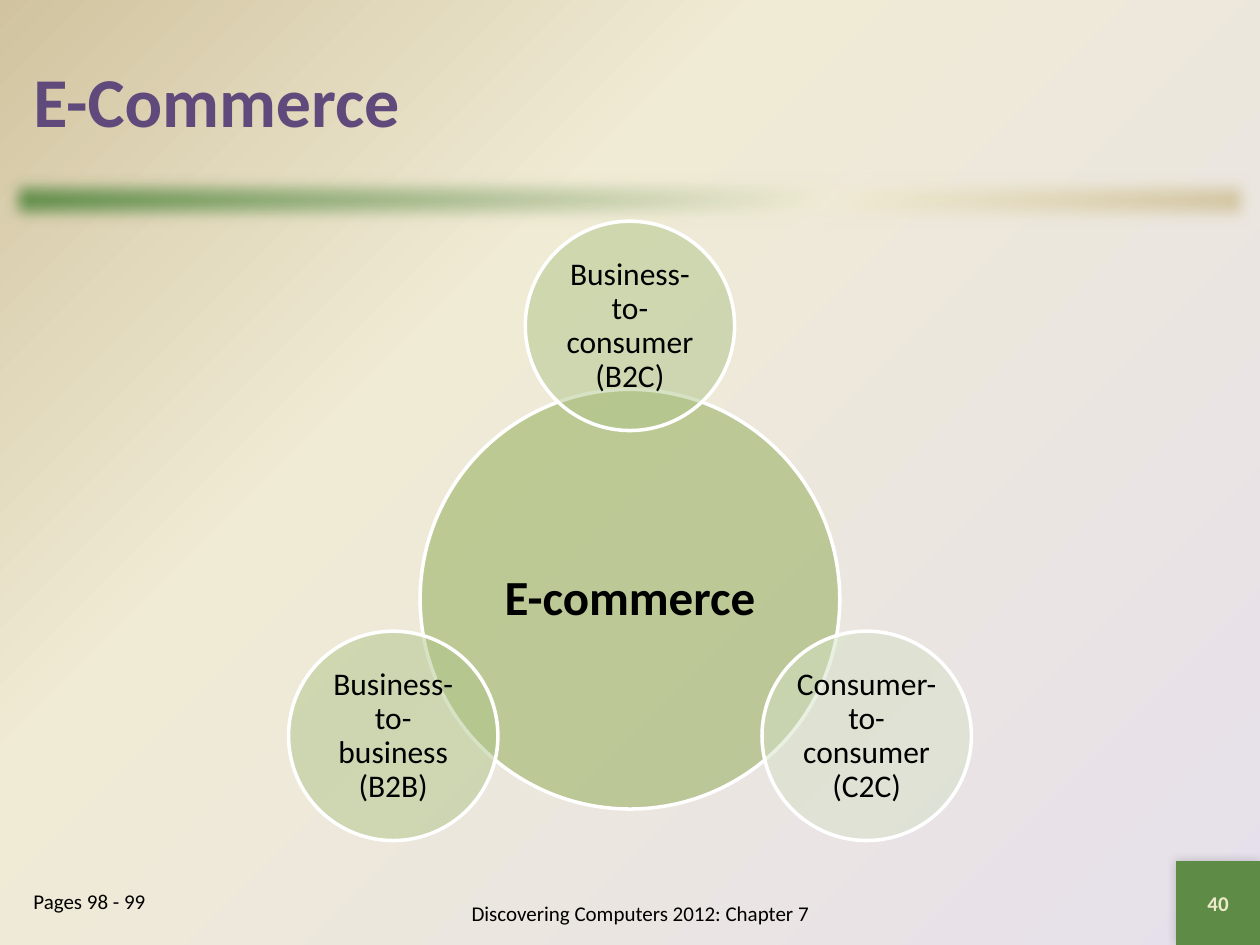
from math import cos, radians, sin

from lxml.etree import SubElement
from pptx import Presentation
from pptx.dml.color import RGBColor
from pptx.enum.shapes import MSO_SHAPE
from pptx.enum.text import MSO_ANCHOR, PP_ALIGN
from pptx.oxml.ns import qn
from pptx.util import Cm, Pt

GREEN, CREAM, TAN, LILAC = "5E8B46", "F0EBD5", "D1C39F", "E6E0EC"
CENTER_X, CENTER_Y, ORBIT = 12.7, 12.08, 5.51
HUB_SIZE, SATELLITE_SIZE = 8.46, 4.22
SATELLITES = [
    ("Business-to-consumer (B2C)", "B0C58B", -90),
    ("Consumer-to-consumer (C2C)", "D5E1C5", 30),
    ("Business-to-business (B2B)", "B0C58B", 150),
]


def color(value):
    return RGBColor.from_string(value)


def apply(target, values):
    for name, value in values.items():
        setattr(target, name, value)


def place(box, left, top, width, height):
    apply(box, {"left": Cm(left), "top": Cm(top), "width": Cm(width), "height": Cm(height)})


def write(box, text, size, ink, bold=False, align=PP_ALIGN.CENTER,
          anchor=MSO_ANCHOR.MIDDLE, margin=None, spacing=1.0):
    frame = box.text_frame
    apply(frame, {"word_wrap": True, "vertical_anchor": anchor})
    if margin is not None:
        for side in ("left", "top", "right", "bottom"):
            setattr(frame, f"margin_{side}", Cm(margin))
    para = frame.paragraphs[0]
    apply(para, {"alignment": align, "line_spacing": spacing, "space_before": Pt(0)})
    span = para.add_run()
    span.text = text
    apply(span.font, {"name": "Calibri", "size": Pt(size), "bold": bold})
    span.font.color.rgb = color(ink)
    return para


def fill_gradient(fill, element, stops):
    fill.gradient()
    gradient = next(element.iter(qn("a:gradFill")))
    stop_list = gradient.find(qn("a:gsLst"))
    for stop in list(stop_list):
        stop_list.remove(stop)
    for position, value in stops:
        stop = SubElement(stop_list, qn("a:gs"), pos=str(position * 1000))
        SubElement(stop, qn("a:srgbClr"), val=value)
    gradient.find(qn("a:lin")).set("ang", str(45 * 60000))


def add_effect(shape, name, **values):
    effects = shape.element.spPr.find(qn("a:effectLst"))
    return SubElement(effects, qn(f"a:{name}"), **values)


def add_rectangle(page, left, top, width, height):
    shape = page.shapes.add_shape(
        MSO_SHAPE.RECTANGLE, Cm(left), Cm(top), Cm(width), Cm(height))
    shape.shadow.inherit = False
    shape.line.fill.background()
    return shape


def add_bar(page):
    bar = add_rectangle(page, 0, 3.39, 25.4, 1.27)
    fill_gradient(bar.fill, bar.element, [(0, GREEN), (65, CREAM), (100, TAN)])
    add_effect(bar, "softEdge", rad=str(Pt(10)))


def add_page_number(page, number):
    square = add_rectangle(page, 23.71, 17.36, 1.69, 1.69)
    square.fill.solid()
    square.fill.fore_color.rgb = color(GREEN)
    shadow = add_effect(square, "outerShdw", blurRad=str(Pt(6)), dist="0",
                        dir=str(225 * 60000), algn="ctr", rotWithShape="0")
    shade = SubElement(shadow, qn("a:srgbClr"), val="000000")
    SubElement(shade, qn("a:alpha"), val="20000")
    write(square, number, 12, "EEEBCA", bold=True)


def add_circle(group, text, center_x, center_y, size, shade, font_size, bold=False):
    circle = group.shapes.add_shape(
        MSO_SHAPE.OVAL, Cm(center_x - size / 2), Cm(center_y - size / 2), Cm(size), Cm(size))
    circle.shadow.inherit = False
    circle.fill.solid()
    circle.fill.fore_color.rgb = color(shade)
    tint = circle.element.spPr.find(qn("a:solidFill")).find(qn("a:srgbClr"))
    SubElement(tint, qn("a:alpha"), val="50000")
    circle.line.color.rgb = color("FFFFFF")
    circle.line.width = Pt(2)
    write(circle, text, font_size, "000000", bold, margin=0.08, spacing=0.9)


def add_diagram(page):
    group = page.shapes.add_group_shape()
    add_circle(group, "E-commerce", CENTER_X, CENTER_Y, HUB_SIZE, "8DAA51", 28, True)
    for text, shade, angle in SATELLITES:
        turn = radians(angle)
        add_circle(group, text, CENTER_X + ORBIT * cos(turn), CENTER_Y + ORBIT * sin(turn),
                   SATELLITE_SIZE, shade, 18)


def fill_placeholders(page):
    title, body = page.shapes.title, page.placeholders[1]
    place(title, 0.42, 0.42, 24.56, 3.18)
    write(title, "E-Commerce", 40, "604A7B", bold=True, align=PP_ALIGN.LEFT)
    place(body, 0.42, 17.78, 4.65, 1.27)
    para = write(body, "Pages 98 - 99", 12, "000000",
                 align=PP_ALIGN.LEFT, anchor=MSO_ANCHOR.TOP)
    properties = para._p.get_or_add_pPr()
    properties.set("marL", str(Cm(0.95)))
    properties.set("indent", str(Cm(-0.95)))
    SubElement(properties, qn("a:buNone"))


def add_footer(page):
    footer = page.shapes.add_textbox(Cm(7.62), Cm(17.78), Cm(10.58), Cm(1.27))
    write(footer, "Discovering Computers 2012: Chapter 7", 12, "000000")


def main():
    deck = Presentation()
    apply(deck, {"slide_width": Cm(25.4), "slide_height": Cm(19.05)})
    page = deck.slides.add_slide(deck.slide_layouts[1])
    fill_gradient(page.background.fill, page.element, [(0, TAN), (35, CREAM), (100, LILAC)])
    add_bar(page)
    fill_placeholders(page)
    add_footer(page)
    add_page_number(page, "40")
    add_diagram(page)
    deck.save("out.pptx")


if __name__ == "__main__":
    main()
